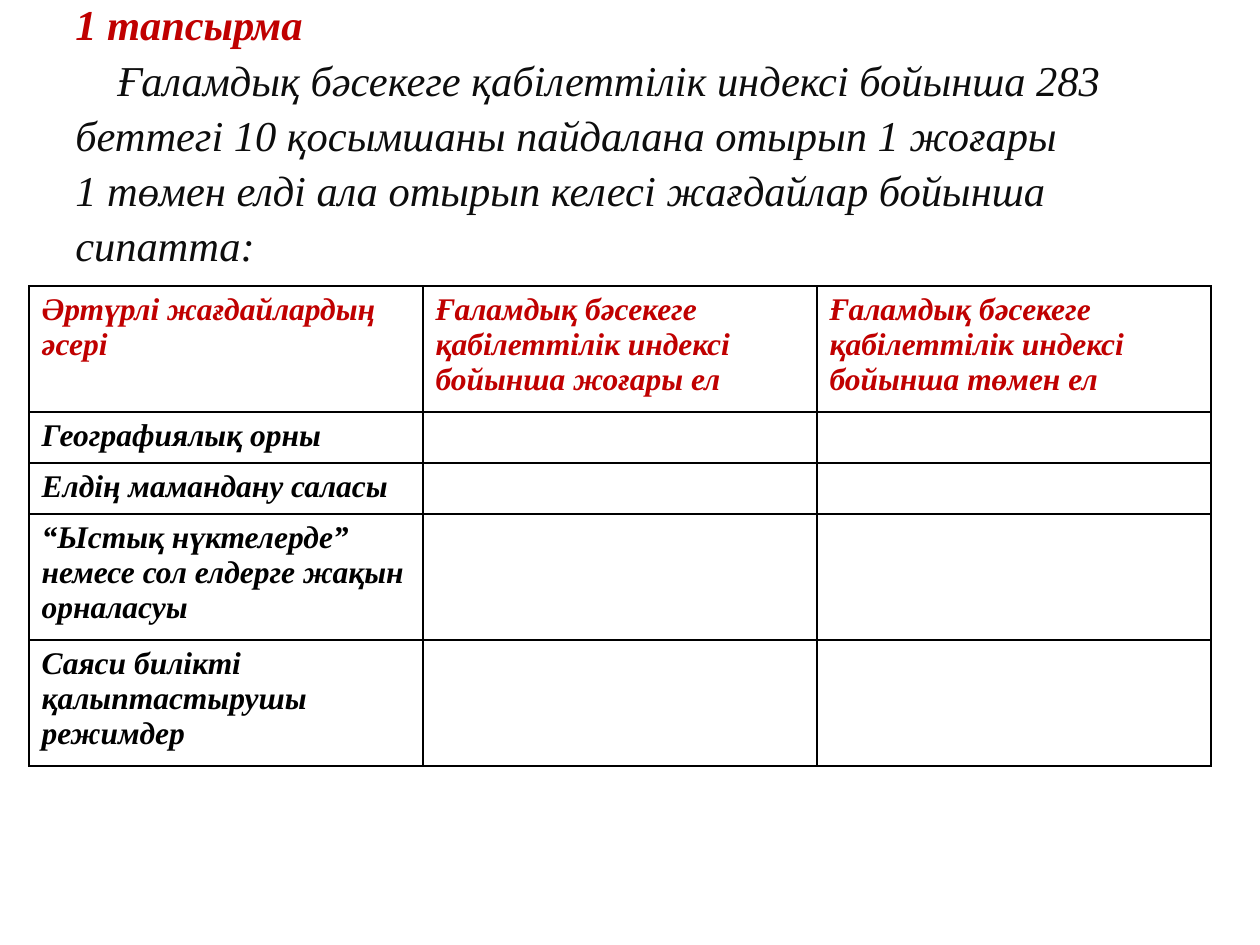
from dataclasses import dataclass

from lxml.etree import SubElement
from pptx import Presentation
from pptx.dml.color import RGBColor
from pptx.enum.text import MSO_ANCHOR
from pptx.oxml.ns import qn
from pptx.util import Emu, Pt

PX_PER_INCH = 126


@dataclass(frozen=True)
class Theme:
    font: str = "Times New Roman"
    accent: str = "C00000"
    task: str = "0D0D0D"
    body: str = "000000"
    border: str = "000000"
    task_size: float = 24.3
    table_size: float = 18
    border_width: float = 1


THEME = Theme()

HEADING = "1 тапсырма"
TASK_LINES = [
    "Ғаламдық бәсекеге қабілеттілік индексі бойынша 283 беттегі 10 қосымшаны "
    "пайдалана отырып 1 жоғары",
    "1 төмен елді ала отырып келесі жағдайлар бойынша сипатта:",
]
COLUMN_HEADERS = [
    "Әртүрлі жағдайлардың әсері",
    "Ғаламдық бәсекеге қабілеттілік индексі бойынша жоғары ел",
    "Ғаламдық бәсекеге қабілеттілік индексі бойынша төмен ел",
]
CONDITIONS = [
    "Географиялық орны",
    "Елдің мамандану саласы",
    "“Ыстық нүктелерде” немесе сол елдерге жақын орналасуы",
    "Саяси билікті қалыптастырушы режимдер",
]
COLUMN_WIDTH = 394
ROW_HEIGHTS = [117, 51, 51, 117, 117]


def px(length):
    return Emu(round(length * 914400 / PX_PER_INCH))


def format_runs(paragraph, size, color, bold):
    for run in paragraph.runs:
        font = run.font
        font.name, font.size = THEME.font, Pt(size)
        font.bold, font.italic = bold, True
        font.color.rgb = RGBColor.from_string(color)


def add_task(slide):
    box = slide.shapes.add_textbox(px(63), px(-2), px(1134), px(268))
    frame = box.text_frame
    frame.word_wrap = True
    frame.vertical_anchor = MSO_ANCHOR.MIDDLE
    frame.text = "\n".join([HEADING, *TASK_LINES])
    for index, paragraph in enumerate(frame.paragraphs):
        is_heading = index == 0
        paragraph.line_spacing = 1.08
        format_runs(paragraph, THEME.task_size,
                    THEME.accent if is_heading else THEME.task, is_heading)
    first_line = frame.paragraphs[1]
    first_line._p.get_or_add_pPr().set("indent", str(px(42)))


def set_borders(cell):
    """Draw all four sides; call before the fill, which must follow in the XML."""
    properties = cell._tc.get_or_add_tcPr()
    for side in ("lnL", "lnR", "lnT", "lnB"):
        line = SubElement(properties, qn(f"a:{side}"), w=str(Pt(THEME.border_width)))
        fill = SubElement(line, qn("a:solidFill"))
        SubElement(fill, qn("a:srgbClr"), val=THEME.border)


def add_conditions_table(slide):
    rows = [COLUMN_HEADERS] + [[condition, "", ""] for condition in CONDITIONS]
    table = slide.shapes.add_table(
        len(rows), len(COLUMN_HEADERS), px(29), px(286),
        px(COLUMN_WIDTH * len(COLUMN_HEADERS)), px(sum(ROW_HEIGHTS))).table
    for column in table.columns:
        column.width = px(COLUMN_WIDTH)
    for row_index, (texts, height) in enumerate(zip(rows, ROW_HEIGHTS)):
        table.rows[row_index].height = px(height)
        color = THEME.body if row_index else THEME.accent
        for column_index, text in enumerate(texts):
            cell = table.cell(row_index, column_index)
            set_borders(cell)
            cell.fill.background()
            if text:
                cell.text_frame.text = text
                format_runs(cell.text_frame.paragraphs[0], THEME.table_size, color, True)


def main():
    presentation = Presentation()
    presentation.slide_width, presentation.slide_height = px(1260), px(945)
    slide = presentation.slides.add_slide(presentation.slide_layouts[6])
    add_task(slide)
    add_conditions_table(slide)
    presentation.save("out.pptx")


if __name__ == "__main__":
    main()
